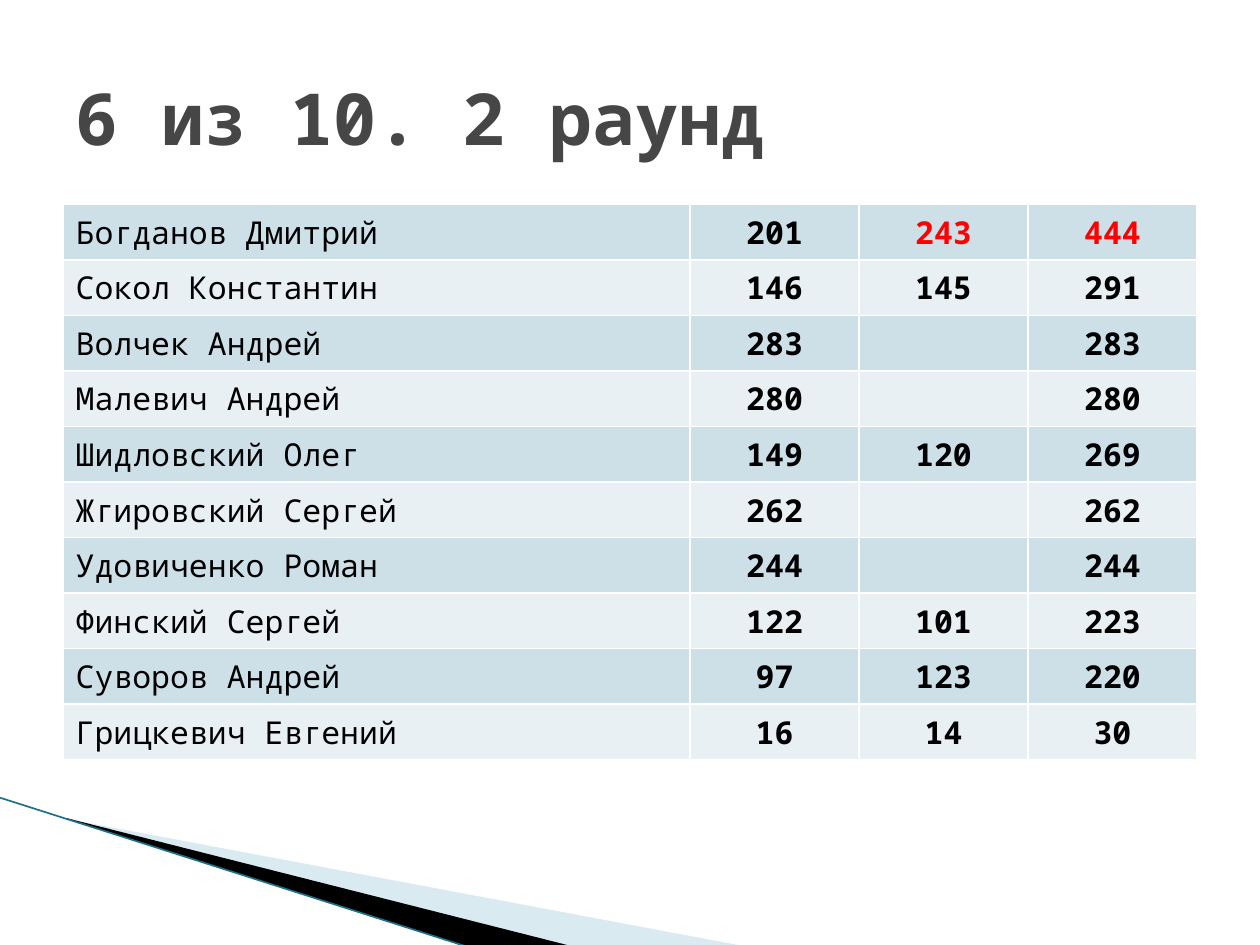
import pptx
import pptx.dml.color
import pptx.enum.text
import pptx.oxml
import pptx.oxml.ns
import pptx.util
from lxml import etree

Pt = pptx.util.Pt
ALIGN = pptx.enum.text.PP_ALIGN
FONT = "Noto Sans Mono"
SCORES = [
    ("Богданов Дмитрий", 201, 243),
    ("Сокол Константин", 146, 145),
    ("Волчек Андрей", 283, None),
    ("Малевич Андрей", 280, None),
    ("Шидловский Олег", 149, 120),
    ("Жгировский Сергей", 262, None),
    ("Удовиченко Роман", 244, None),
    ("Финский Сергей", 122, 101),
    ("Суворов Андрей", 97, 123),
    ("Грицкевич Евгений", 16, 14),
]


def colour(value):
    """Return the RGB colour for a hex string."""
    return pptx.dml.color.RGBColor.from_string(value)


def style_text(paragraph, size, ink, bold, align):
    """Format a paragraph and its runs."""
    paragraph.alignment = align
    for font in [paragraph.font] + [run.font for run in paragraph.runs]:
        font.name, font.size, font.bold = FONT, Pt(size), bold
        font.color.rgb = colour(ink)


def add_wedge(slide, left, top, corners, fill, opacity=100):
    """Draw a borderless wedge whose corners are offsets from left and top."""
    points = [(Pt(left + x), Pt(top + y)) for x, y in corners]
    builder = slide.shapes.build_freeform(*points[0], scale=1.0)
    builder.add_line_segments(points[1:], close=True)
    wedge = builder.convert_to_shape()
    wedge.shadow.inherit = False
    wedge.line.fill.background()
    wedge.fill.solid()
    wedge.fill.fore_color.rgb = colour(fill)
    if opacity < 100:
        tint = wedge.fill._xPr.find(".//" + pptx.oxml.ns.qn("a:srgbClr"))
        etree.SubElement(tint, pptx.oxml.ns.qn("a:alpha"), val=str(opacity * 1000))


def add_corner_swoosh(slide, left, top, width, height):
    """Draw the two wedges and the edge line at the bottom left."""
    start = left + 39
    wedge_top = top + 12
    drop = height - 12
    add_wedge(slide, start, wedge_top, [(0, 0.5), (389, drop), (289, drop), (0, 0)],
              "A0CBDC", 40)
    add_wedge(slide, start, wedge_top, [(0, 0), (290, drop), (229, drop), (0, 0.5)],
              "000000")
    edge = slide.shapes.add_connector(
        pptx.enum.shapes.MSO_CONNECTOR.STRAIGHT,
        Pt(left), Pt(top), Pt(left + width), Pt(top + height))
    edge.line.color.rgb = colour("1F7087")
    edge.line.width = Pt(0.95)
    etree.SubElement(edge._element.spPr, pptx.oxml.ns.qn("a:effectLst"))


def place_title(slide, left, top, width, height):
    """Fill and format the title placeholder."""
    title = slide.shapes.title
    title.left, title.top, title.width, title.height = map(Pt, (left, top, width, height))
    frame = title.text_frame
    frame.text = "6 из 10. 2 раунд"
    frame.auto_size = pptx.enum.text.MSO_AUTO_SIZE.NONE
    frame.vertical_anchor = pptx.enum.text.MSO_ANCHOR.MIDDLE
    style_text(frame.paragraphs[0], 41, "464646", True, ALIGN.LEFT)


def style_cell(cell, fill):
    """Give a cell white borders and a solid fill."""
    properties = cell._tc.get_or_add_tcPr()
    for side in ("lnL", "lnR", "lnT", "lnB"):
        properties.append(pptx.oxml.parse_xml(
            f'<a:{side} {pptx.oxml.ns.nsdecls("a")} w="12700"><a:solidFill>'
            f'<a:srgbClr val="FFFFFF"/></a:solidFill></a:{side}>'))
    cell.fill.solid()
    cell.fill.fore_color.rgb = colour(fill)


def add_score_table(slide, left, top, width, height):
    """Add the players with their two scores and the total."""
    table = slide.shapes.add_table(
        len(SCORES), 4, Pt(left), Pt(top), Pt(width), Pt(height)).table
    table.first_row = table.horz_banding = False
    score_width = width * 0.149
    for column, column_width in zip(
            table.columns, [width - 3 * score_width] + [score_width] * 3):
        column.width = Pt(column_width)
    for row, (player, first, second) in enumerate(SCORES):
        table.rows[row].height = Pt(height / len(SCORES))
        values = (player, first, second, first + (second or 0))
        for column, value in enumerate(values):
            cell = table.cell(row, column)
            style_cell(cell, "E8F0F4" if row % 2 else "CDE0E8")
            cell.text_frame.text = "" if value is None else str(value)
            leading = row == 0 and column >= 2
            style_text(cell.text_frame.paragraphs[0], 18,
                       "FF0000" if leading else "000000", column > 0,
                       ALIGN.CENTER if column else ALIGN.LEFT)


def main():
    """Build and save the slide."""
    deck = pptx.Presentation()
    deck.slide_width, deck.slide_height = Pt(720), Pt(540)
    slide = deck.slides.add_slide(deck.slide_layouts[5])
    add_corner_swoosh(slide, -1, 455.5, 268, 85.5)
    place_title(slide, 36, 21.6, 648, 90)
    add_score_table(slide, 36, 116.9, 648, 292)
    deck.save("out.pptx")


if __name__ == "__main__":
    main()
